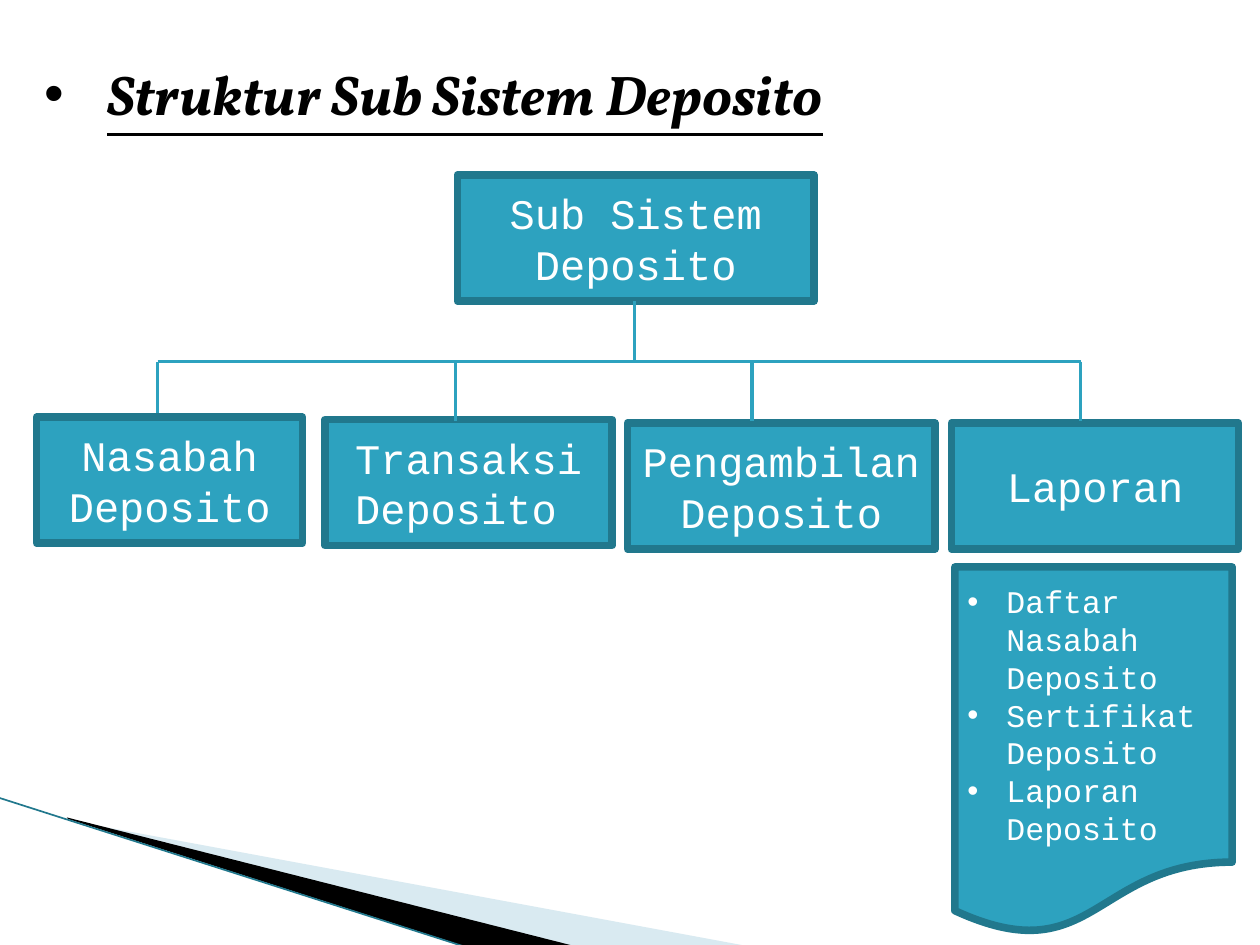
from lxml import etree
from pptx import Presentation
from pptx import util as u
from pptx.dml.color import RGBColor
from pptx.enum import shapes, text
from pptx.oxml.ns import qn

COLORS = {
    "teal": "2DA2BF",
    "edge": "21788D",
    "mist": "A0CBDC",
    "black": "000000",
    "white": "FFFFFF",
}
BODY_FONT = "Courier New"
TITLE_FONT = "Vollkorn"


class Deck:
    def __init__(self, prs):
        self.prs = prs
        self.s = prs.slides.add_slide(prs.slide_layouts[6])

    def color(self, name):
        return RGBColor.from_string(COLORS[name])

    def fill(self, sp, name):
        sp.shadow.inherit = False
        sp.fill.solid()
        sp.fill.fore_color.rgb = self.color(name)

    def wedge(self, points, name, alpha=None):
        points = [(u.Cm(x), u.Cm(y)) for x, y in points]
        builder = self.s.shapes.build_freeform(*points[0])
        builder.add_line_segments(points[1:], close=True)
        sp = builder.convert_to_shape()
        self.fill(sp, name)
        sp.line.fill.background()
        if alpha is not None:
            clr = sp._element.spPr.find(qn("a:solidFill"))[0]
            etree.SubElement(clr, qn("a:alpha")).set("val", str(alpha * 1000))

    def line(self, x1, y1, x2, y2, name="teal", width=1.75):
        cx = self.s.shapes.add_connector(
            shapes.MSO_CONNECTOR.STRAIGHT, u.Cm(x1), u.Cm(y1), u.Cm(x2), u.Cm(y2))
        cx.line.color.rgb = self.color(name)
        cx.line.width = u.Pt(width)
        etree.SubElement(cx._element.spPr, qn("a:effectLst"))

    def run(self, p, words, size, font, name):
        r = p.add_run()
        r.text = words
        r.font.size = u.Pt(size)
        r.font.name = font
        r.font.color.rgb = self.color(name)
        return r

    def bullet(self, p, indent):
        pPr = p._p.get_or_add_pPr()
        pPr.set("marL", str(u.Cm(indent)))
        pPr.set("indent", str(-u.Cm(indent)))
        etree.SubElement(pPr, qn("a:buFont")).set("typeface", "Arial")
        etree.SubElement(pPr, qn("a:buChar")).set("char", "•")

    def panel(self, kind, x, y, w, h):
        sp = self.s.shapes.add_shape(kind, u.Cm(x), u.Cm(y), u.Cm(w), u.Cm(h))
        self.fill(sp, "teal")
        sp.line.color.rgb = self.color("edge")
        sp.line.width = u.Pt(4.33)
        tf = sp.text_frame
        tf.word_wrap = True
        tf.vertical_anchor = text.MSO_ANCHOR.MIDDLE
        return tf

    def box(self, words, x, y, w):
        tf = self.panel(shapes.MSO_SHAPE.RECTANGLE, x, y, w, 2.54)
        p = tf.paragraphs[0]
        p.alignment = text.PP_ALIGN.CENTER
        self.run(p, words, 24, BODY_FONT, "white")

    def document(self, items, x, y, w, h):
        tf = self.panel(shapes.MSO_SHAPE.FLOWCHART_DOCUMENT, x, y, w, h)
        for i, item in enumerate(items):
            p = tf.add_paragraph() if i else tf.paragraphs[0]
            p.alignment = text.PP_ALIGN.LEFT
            self.bullet(p, 0.79)
            self.run(p, item, 18, BODY_FONT, "white")

    def title(self, words, x, y, w, h):
        sp = self.s.shapes.add_textbox(u.Cm(x), u.Cm(y), u.Cm(w), u.Cm(h))
        tf = sp.text_frame
        tf.word_wrap = True
        tf.auto_size = text.MSO_AUTO_SIZE.SHAPE_TO_FIT_TEXT
        p = tf.paragraphs[0]
        self.bullet(p, 1.27)
        r = self.run(p, words, 32, TITLE_FONT, "black")
        r.font.bold = r.font.italic = r.font.underline = True


def main():
    prs = Presentation()
    prs.slide_width, prs.slide_height = u.Cm(25.4), u.Cm(19.05)
    deck = Deck(prs)

    deck.wedge([(1.4, 16.54), (15.11, 19.08), (11.58, 19.08), (1.4, 16.51)], "mist", 40)
    deck.wedge([(1.35, 16.48), (11.61, 19.08), (9.45, 19.1), (1.37, 16.51)], "black")
    deck.line(-0.03, 16.08, 9.42, 19.1, "edge", 0.95)

    deck.box("Sub Sistem Deposito", 9.22, 3.53, 7.19)
    deck.box("Transaksi Deposito ", 6.55, 8.46, 5.79)
    deck.box("Laporan", 19.18, 8.53, 5.79)
    deck.box("Pengambilan Deposito", 12.65, 8.53, 6.2)

    bus, drops = 7.29, [3.18, 9.19, 15.16, 21.79]
    deck.line(12.8, 6.07, 12.8, bus)
    deck.line(drops[0], bus, drops[-1], bus)
    for x in drops:
        deck.line(x, bus, x, 8.48)

    deck.title("Struktur Sub Sistem Deposito", 0.64, 1.07, 22.28, 1.63)
    deck.box("Nasabah Deposito", 0.74, 8.41, 5.36)
    deck.document(
        ["Daftar Nasabah Deposito", "Sertifikat Deposito", "Laporan Deposito"],
        19.25, 11.43, 5.59, 7.42)

    prs.save("out.pptx")


if __name__ == "__main__":
    main()
